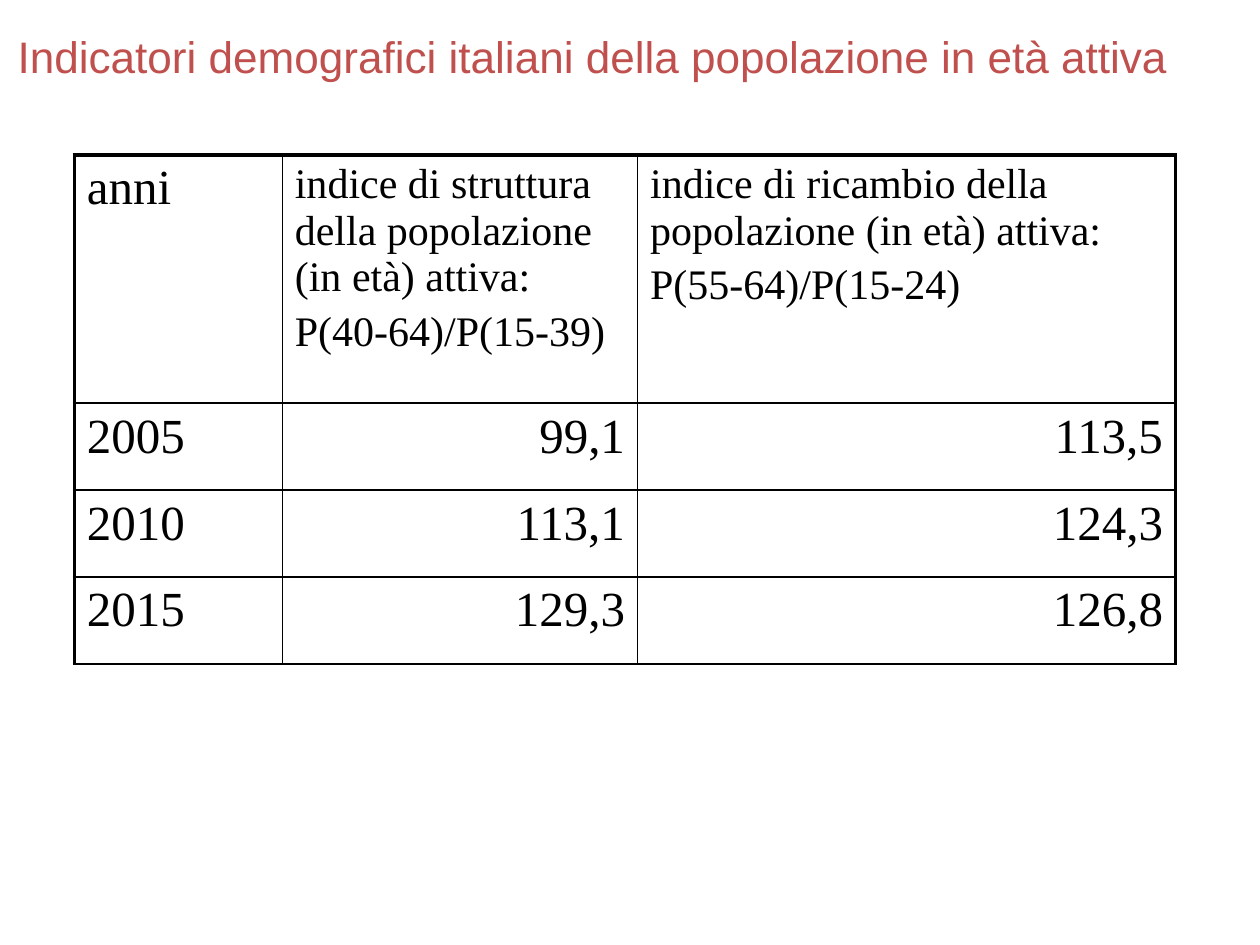
from typing import NamedTuple

from lxml import etree
from pptx import Presentation
from pptx.dml.color import RGBColor
from pptx.enum.text import MSO_ANCHOR, PP_ALIGN
from pptx.oxml.ns import qn
from pptx.util import Inches, Pt

LEFT, RIGHT = PP_ALIGN.LEFT, PP_ALIGN.RIGHT
MIDDLE = MSO_ANCHOR.MIDDLE
BLACK, RED = "000000", "C0504D"
THIN, THICK = 1, 2.25
COLS = [1.65, 2.82, 4.27]
HEAD_H, ROW_H = 1.97, 0.69


class Row(NamedTuple):
    year: str
    struct: str
    turn: str


HEAD = Row(
    "anni",
    "indice di struttura della popolazione (in età) attiva:\nP(40-64)/P(15-39)",
    "indice di ricambio della popolazione (in età) attiva:\nP(55-64)/P(15-24)",
)
ROWS = [
    HEAD,
    Row("2005", "99,1", "113,5"),
    Row("2010", "113,1", "124,3"),
    Row("2015", "129,3", "126,8"),
]


def paint(target, color: str) -> None:
    target.rgb = RGBColor.from_string(color)


def write(frame, text: str, *, size: float, font: str, color: str = BLACK,
          align=LEFT, before: float = 0) -> None:
    """Fill a text frame, one paragraph per line of text."""
    frame.text = text
    for para in frame.paragraphs:
        para.alignment = align
        para.space_before = Pt(before)
        for run in para.runs:
            run.font.size = Pt(size)
            run.font.name = font
            run.font.bold = False
            paint(run.font.color, color)


def border(cell, **widths: float) -> None:
    """Draw the cell's sides; keys are L, R, T and B, in that order."""
    props = cell._tc.get_or_add_tcPr()
    for at, (side, width) in enumerate(widths.items()):
        line = etree.Element(qn(f"a:ln{side}"), w=str(Pt(width)))
        fill = etree.SubElement(line, qn("a:solidFill"))
        etree.SubElement(fill, qn("a:srgbClr"), val=BLACK)
        props.insert(at, line)


def add_grid(slide, rows: list[Row]) -> None:
    high = HEAD_H + ROW_H * (len(rows) - 1)
    frame = slide.shapes.add_table(
        len(rows), len(COLS), Inches(0.59), Inches(1.23),
        Inches(sum(COLS)), Inches(high))
    table = frame.table
    table.first_row = table.horz_banding = False
    for col, width in zip(table.columns, COLS):
        col.width = Inches(width)
    last = len(COLS) - 1
    for r, row in enumerate(rows):
        table.rows[r].height = Inches(ROW_H if r else HEAD_H)
        for c, text in enumerate(row):
            cell = table.cell(r, c)
            size = 24 if r == 0 and c else 28
            write(cell.text_frame, text, size=size, font="Times New Roman",
                  align=RIGHT if r and c else LEFT, before=size * 0.2)
            cell.fill.background()
            border(cell, L=THIN if c else THICK, R=THICK if c == last else THIN,
                   T=THIN if r else THICK, B=THIN)


def main() -> None:
    deck = Presentation()
    deck.slide_width, deck.slide_height = Inches(10), Inches(7.5)
    slide = deck.slides.add_slide(deck.slide_layouts[5])
    title = slide.shapes.title
    title.left, title.top = Inches(0.04), Inches(0.21)
    title.width, title.height = Inches(9.96), Inches(0.47)
    title.text_frame.vertical_anchor = MIDDLE
    write(title.text_frame, "Indicatori demografici italiani della popolazione in età attiva",
          size=25.2, font="Arial", color=RED)
    add_grid(slide, ROWS)
    deck.save("out.pptx")


if __name__ == "__main__":
    main()
